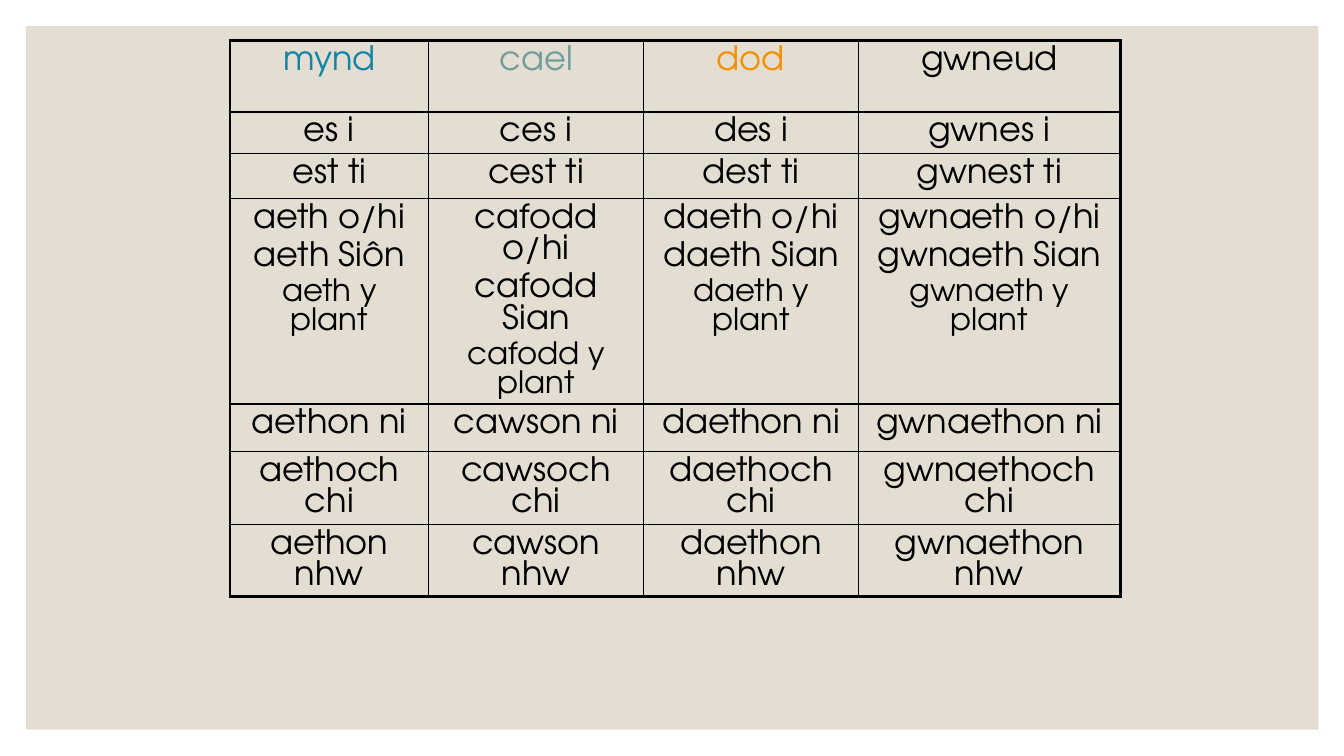
"""Build a slide with a table of Welsh irregular past-tense verbs."""
from lxml import etree
from pptx import Presentation
from pptx.dml.color import RGBColor
from pptx.enum.shapes import MSO_SHAPE
from pptx.enum.text import PP_ALIGN
from pptx.oxml.ns import qn
from pptx.util import Pt

RECT = MSO_SHAPE.RECTANGLE
CENTER = PP_ALIGN.CENTER
FONT = "TeX Gyre Adventor"
BLACK = "000000"
SAND = "E3DED1"
THIN, THICK = 1, 2.25
BIG, SMALL = 24, 22
WIDTHS = [142, 153.5, 153.5, 187]
HEIGHTS = [51.2, 28, 32.4, 104.4, 34, 38, 34]
HEADS = ["1485A4", "739D9B", "F49100", BLACK]
VERBS = [
    ["mynd", "cael", "dod", "gwneud"],
    ["es i", "ces i", "des i", "gwnes i"],
    ["est ti", "cest ti", "dest ti", "gwnest ti"],
    ["aeth o/hi\naeth Siôn\naeth y plant",
     "cafodd o/hi\ncafodd Sian\ncafodd y plant",
     "daeth o/hi\ndaeth Sian\ndaeth y plant",
     "gwnaeth o/hi\ngwnaeth Sian\ngwnaeth y plant"],
    ["aethon ni", "cawson ni", "daethon ni", "gwnaethon ni"],
    ["aethoch chi", "cawsoch chi", "daethoch chi", "gwnaethoch chi"],
    ["aethon nhw", "cawson nhw", "daethon nhw", "gwnaethon nhw"],
]


def color(code):
    """Turn a hex string into a colour."""
    return RGBColor.from_string(code)


def add_panel(slide, left, top, width, height):
    """Draw the sand panel that fills the given box."""
    panel = slide.shapes.add_shape(RECT, Pt(left), Pt(top), Pt(width), Pt(height))
    panel.shadow.inherit = False
    panel.fill.solid()
    panel.fill.fore_color.rgb = color(SAND)
    panel.line.fill.background()


def set_edges(cell, edges):
    """Give the cell black borders, from a map of side to line width."""
    props = cell._tc.get_or_add_tcPr()
    for spot, side in enumerate("LRTB"):
        line = etree.Element(qn(f"a:ln{side}"), w=str(Pt(edges[side])))
        fill = etree.SubElement(line, qn("a:solidFill"))
        etree.SubElement(fill, qn("a:srgbClr"), val=BLACK)
        props.insert(spot, line)


def fill_cell(cell, text, code):
    """Write each line of text as a centred paragraph, the third one smaller."""
    cell.fill.background()
    frame = cell.text_frame
    for pos, words in enumerate(text.split("\n")):
        para = frame.add_paragraph() if pos else frame.paragraphs[0]
        size = SMALL if pos == 2 else BIG
        para.alignment = CENTER
        para.space_before = Pt(size * 0.2)
        run = para.add_run()
        run.text = words
        run.font.name = FONT
        run.font.size = Pt(size)
        run.font.color.rgb = color(code)


def add_verbs(slide, left, top):
    """Place the verb table with its top left corner at the given point."""
    rows, cols = len(HEIGHTS), len(WIDTHS)
    table = slide.shapes.add_table(rows, cols, Pt(left), Pt(top),
                                   Pt(sum(WIDTHS)), Pt(sum(HEIGHTS))).table
    table.first_row = table.horz_banding = False
    for col, width in zip(table.columns, WIDTHS):
        col.width = Pt(width)
    for row, height in zip(table.rows, HEIGHTS):
        row.height = Pt(height)
    for r, line in enumerate(VERBS):
        for c, text in enumerate(line):
            cell = table.cell(r, c)
            fill_cell(cell, text, BLACK if r else HEADS[c])
            outer = {"L": c == 0, "R": c == cols - 1,
                     "T": r == 0, "B": r == rows - 1}
            set_edges(cell, {side: THICK if out else THIN
                             for side, out in outer.items()})


def main():
    """Build and save the deck."""
    deck = Presentation()
    deck.slide_width, deck.slide_height = Pt(960), Pt(540)
    slide = deck.slides.add_slide(deck.slide_layouts[6])
    add_panel(slide, 18.7, 18.7, 923, 502.5)
    add_verbs(slide, 164.2, 28.8)
    deck.save("out.pptx")


if __name__ == "__main__":
    main()
